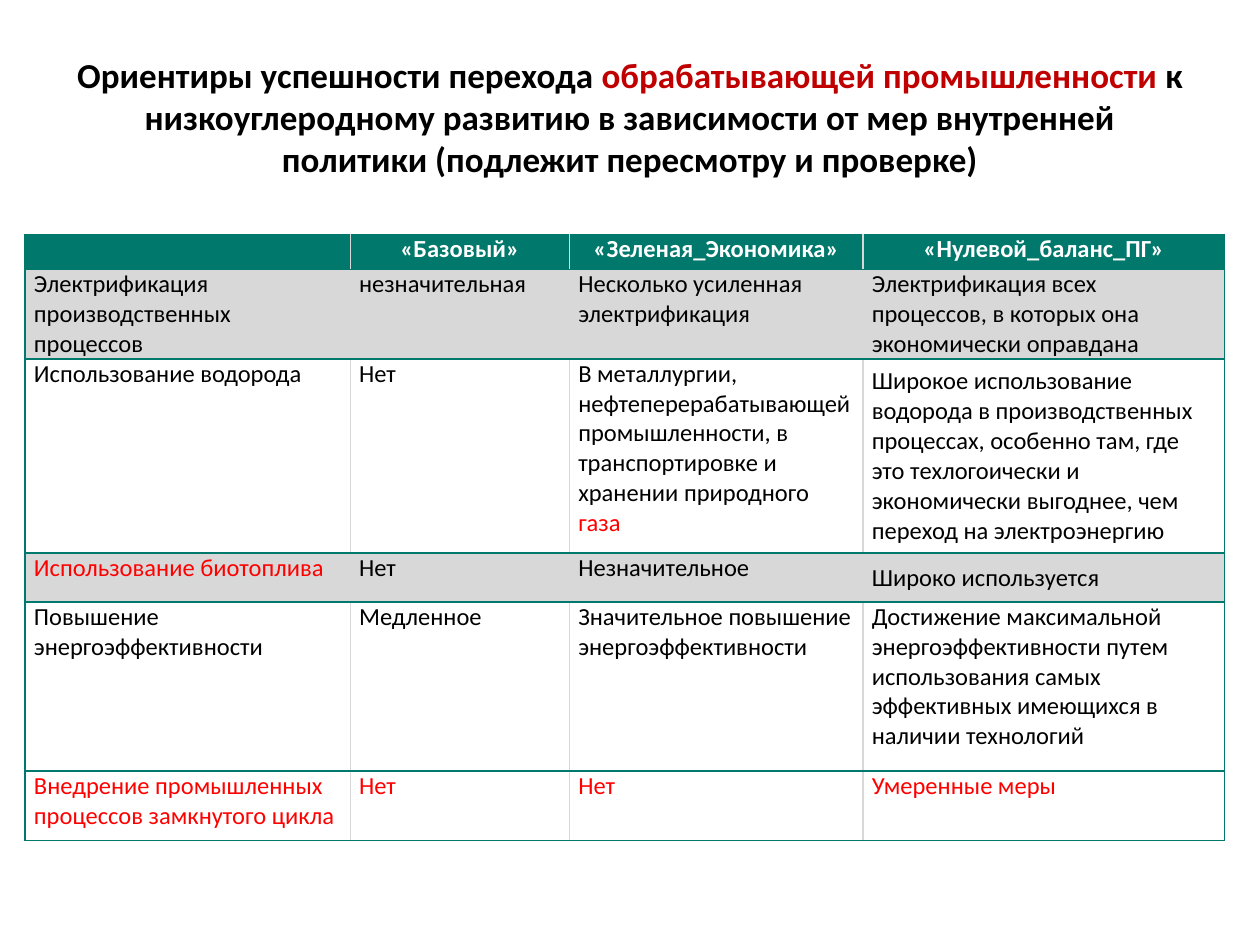
from lxml import etree
from pptx import Presentation, util as u
from pptx.dml.color import RGBColor
from pptx.enum import text
from pptx.oxml import ns

GREEN, GREY, WHITE, BLACK = "00786B", "D8D8D8", "FFFFFF", "000000"
RED, DARK_RED = "FF0000", "C00000"
WIDTHS = [2.58, 1.74, 2.33, 2.87]
HEIGHTS = [0.28, 0.71, 1.54, 0.39, 1.34, 0.55]
GREY_ROWS = (1, 3)
MIDDLE_ROWS = (1, 2, 3)

TITLE = [
    ("Ориентиры успешности перехода ", BLACK),
    ("обрабатывающей промышленности ", DARK_RED),
    ("к низкоуглеродному развитию в зависимости от мер внутренней политики "
     "(подлежит пересмотру и проверке)", BLACK),
]
HEADER = ["", "«Базовый»", "«Зеленая_Экономика»", "«Нулевой_баланс_ПГ»"]
HYDROGEN = [
    ("В металлургии, нефтеперерабатывающей промышленности, в транспортировке "
     "и хранении природного ", BLACK),
    ("газа", RED),
]
BODY = [
    ["Электрификация производственных процессов", "незначительная",
     "Несколько усиленная электрификация",
     "Электрификация всех процессов, в которых она экономически оправдана"],
    ["Использование водорода", "Нет", HYDROGEN,
     "Широкое использование водорода в производственных процессах, особенно там, "
     "где это техлогоически и экономически выгоднее, чем переход на электроэнергию"],
    [[("Использование биотоплива", RED)], "Нет", "Незначительное", "Широко используется"],
    ["Повышение энергоэффективности", "Медленное",
     "Значительное повышение энергоэффективности",
     "Достижение максимальной энергоэффективности путем использования самых "
     "эффективных имеющихся в наличии технологий"],
    [[(words, RED)] for words in
     ("Внедрение промышленных процессов замкнутого цикла", "Нет", "Нет", "Умеренные меры")],
]


def color(value):
    """Turn a hex string into a colour."""
    return RGBColor.from_string(value)


def write(para, spans, size, bold, align):
    """Fill a paragraph with coloured spans of one font."""
    para.alignment = align
    para.font.name, para.font.size, para.font.bold = "Calibri", u.Pt(size), bold
    for words, shade in spans:
        span = para.add_run()
        span.text = words
        span.font.color.rgb = color(shade)


def add_title(page, width, height):
    """Add the centred slide title."""
    box = page.shapes.add_textbox(int(width * 0.05), int(height * 0.04),
                                  int(width * 0.9), int(height / 6))
    box.text_frame.word_wrap = True
    box.text_frame.vertical_anchor = text.MSO_ANCHOR.MIDDLE
    write(box.text_frame.paragraphs[0], TITLE, 20, True, text.PP_ALIGN.CENTER)


def set_borders(cell, sides):
    """Draw one-point cell borders, given as side and colour."""
    properties = cell._tc.get_or_add_tcPr()
    for index, (side, shade) in enumerate(sides.items()):
        line = etree.Element(ns.qn(f"a:ln{side}"), w=str(u.Pt(1)))
        fill = etree.SubElement(line, ns.qn("a:solidFill"))
        etree.SubElement(fill, ns.qn("a:srgbClr"), val=shade)
        properties.insert(index, line)


def style_cell(cell, row, column):
    """Set the fill, margins, anchor and borders by position in the table."""
    last = len(WIDTHS) - 1
    cell.margin_left = cell.margin_right = u.Inches(0.07)
    cell.margin_top = cell.margin_bottom = 0
    middle = column == last and row in MIDDLE_ROWS
    cell.vertical_anchor = text.MSO_ANCHOR.MIDDLE if middle else text.MSO_ANCHOR.TOP
    if row == 0 or row in GREY_ROWS:
        cell.fill.solid()
        cell.fill.fore_color.rgb = color(GREY if row else GREEN)
    else:
        cell.fill.background()
    set_borders(cell, {"L": GREY if column else GREEN,
                       "R": GREY if column < last else GREEN,
                       "T": GREEN, "B": GREEN})


def add_table(page):
    """Add the table of scenarios."""
    rows = [HEADER, *BODY]
    table = page.shapes.add_table(
        len(HEIGHTS), len(WIDTHS), u.Inches(0.2), u.Inches(1.86),
        u.Inches(sum(WIDTHS)), u.Inches(sum(HEIGHTS))).table
    table.first_row = table.horz_banding = False
    for column, width in zip(table.columns, WIDTHS):
        column.width = u.Inches(width)
    for row, height in zip(table.rows, HEIGHTS):
        row.height = u.Inches(height)
    for row, contents in enumerate(rows):
        for column, content in enumerate(contents):
            cell = table.cell(row, column)
            style_cell(cell, row, column)
            para = cell.text_frame.paragraphs[0]
            para.space_before = para.space_after = u.Pt(3)
            if isinstance(content, str):
                content = [(content, BLACK if row else WHITE)] if content else []
            align = text.PP_ALIGN.LEFT if row else text.PP_ALIGN.CENTER
            write(para, content, 14, row == 0, align)


def main():
    """Build and save the slide."""
    deck = Presentation()
    deck.slide_width, deck.slide_height = u.Inches(10), u.Inches(7.5)
    page = deck.slides.add_slide(deck.slide_layouts[6])
    add_title(page, deck.slide_width, deck.slide_height)
    add_table(page)
    deck.save("out.pptx")


if __name__ == "__main__":
    main()
